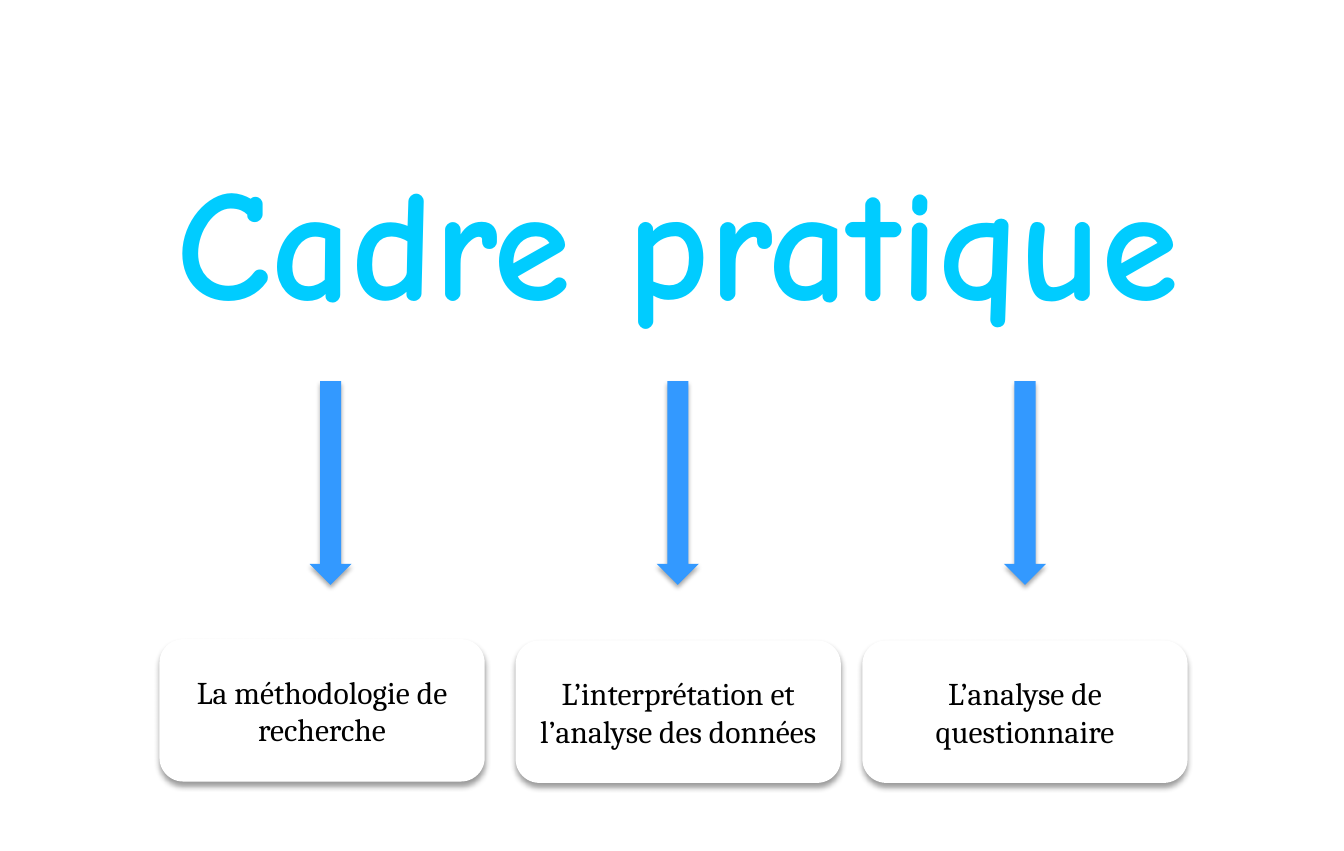
import pptx
import pptx.util
import pptx.dml.color
import pptx.enum.shapes
import pptx.enum.text
from lxml import etree
from pptx.util import Cm, Pt
from pptx.dml.color import RGBColor
from pptx.enum.shapes import MSO_SHAPE
from pptx.enum.text import MSO_ANCHOR, PP_ALIGN
from pptx.oxml.ns import qn

# Content: each part with the left and top of its box in cm
TITLE = "Cadre pratique"
PARTS = [
    ("La méthodologie de recherche", 3.56, 14.27),
    ("L’interprétation et l’analyse des données", 11.51, 14.3),
    ("L’analyse de questionnaire", 19.25, 14.3),
]

CYAN = RGBColor(0x00, 0xCC, 0xFF)
BLUE = RGBColor(0x33, 0x99, 0xFF)
WHITE = RGBColor(0xFF, 0xFF, 0xFF)
BLACK = RGBColor(0x00, 0x00, 0x00)

# Layout in cm
ARROW_LEFT, ARROW_PITCH, ARROW_TOP = 6.91, 7.75, 8.51
ARROW_WIDTH, ARROW_HEIGHT = 0.94, 4.55
BOX_WIDTH, BOX_HEIGHT = 7.26, 3.18


def write(shape, text, font_name, size, color, bold=False):
    frame = shape.text_frame
    frame.text = text
    frame.word_wrap = True
    frame.vertical_anchor = MSO_ANCHOR.MIDDLE
    paragraph = frame.paragraphs[0]
    paragraph.alignment = PP_ALIGN.CENTER
    font = paragraph.runs[0].font
    font.name, font.size, font.bold = font_name, Pt(size), bold
    font.color.rgb = color


def add_raised(kind, left, top, width, height, fill, blur, distance, opacity):
    """Add a borderless shape with a soft shadow falling straight down."""
    shape = slide.shapes.add_shape(kind, Cm(left), Cm(top), Cm(width), Cm(height))
    shape.fill.solid()
    shape.fill.fore_color.rgb = fill
    shape.line.fill.background()
    shape.shadow.inherit = False
    effects = shape.element.spPr.find(qn("a:effectLst"))
    shadow = etree.SubElement(effects, qn("a:outerShdw"), blurRad=str(Pt(blur)),
                              dist=str(Pt(distance)), dir="5400000", rotWithShape="0")
    tint = etree.SubElement(shadow, qn("a:srgbClr"), val=str(BLACK))
    etree.SubElement(tint, qn("a:alpha"), val=str(opacity * 1000))
    return shape


presentation = pptx.Presentation()
presentation.slide_width, presentation.slide_height = Cm(30), Cm(19)
slide = presentation.slides.add_slide(presentation.slide_layouts[6])

# Title
title = slide.shapes.add_textbox(Cm(1.65), Cm(3.1), Cm(26.95), Cm(4.39))
write(title, TITLE, "Comic Neue", 100, CYAN, bold=True)

# Arrows and the parts they lead to
for index, (part, left, top) in enumerate(PARTS):
    add_raised(MSO_SHAPE.DOWN_ARROW, ARROW_LEFT + index * ARROW_PITCH, ARROW_TOP,
               ARROW_WIDTH, ARROW_HEIGHT, BLUE, 3.1, 1.8, 35)
    box = add_raised(MSO_SHAPE.FLOWCHART_ALTERNATE_PROCESS, left, top,
                     BOX_WIDTH, BOX_HEIGHT, WHITE, 4, 3, 40)
    write(box, part, "Cambria", 20, BLACK)

presentation.save("out.pptx")
